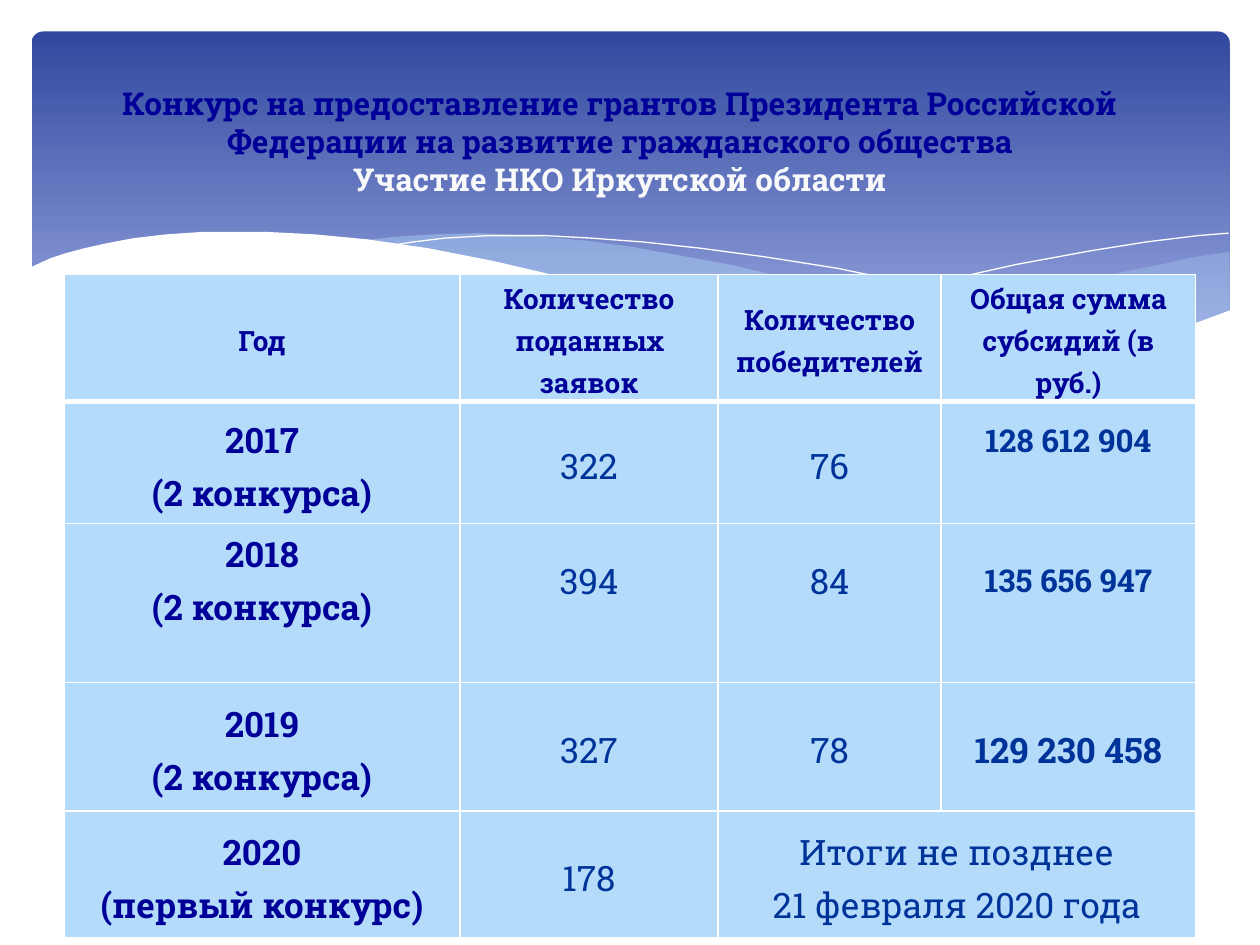
import pptx
import pptx.dml.color
import pptx.enum.shapes
import pptx.enum.text
import pptx.oxml
import pptx.oxml.ns
import pptx.util

FONT = "Roboto Slab"
NAVY, BLUE, SKY, WHITE = "000099", "003399", "B4DCFA", "FFFFFF"
CENTER = pptx.enum.text.PP_ALIGN.CENTER
MIDDLE = pptx.enum.text.MSO_ANCHOR.MIDDLE

deck = pptx.Presentation()
deck.slide_width = pptx.util.Inches(10)
deck.slide_height = pptx.util.Inches(7.5)
page = deck.slides.add_slide(deck.slide_layouts[6])
# The page is a grid of 1000 columns and 750 rows of square units.
unit = deck.slide_width // 1000


def color(value):
    return pptx.dml.color.RGBColor.from_string(value)


def add_curve(points, fill=None, alpha=100, line=None):
    """Draw grid points as a filled outline, or as an open hairline."""
    builder = page.shapes.build_freeform(*points[0], scale=unit)
    builder.add_line_segments(points[1:], close=fill is not None)
    curve = builder.convert_to_shape()
    curve.shadow.inherit = False
    if fill:
        curve.fill.solid()
        curve.fill.fore_color.rgb = color(fill)
        tint = curve.fill._xPr.find(".//" + pptx.oxml.ns.qn("a:srgbClr"))
        tint.append(pptx.oxml.parse_xml(
            f'<a:alpha {pptx.oxml.ns.nsdecls("a")} val="{alpha * 1000}"/>'))
    else:
        curve.fill.background()
    if line:
        curve.line.color.rgb = color(line)
        curve.line.width = pptx.util.Pt(0)
    else:
        curve.line.fill.background()


# Banner with waves
banner = page.shapes.add_shape(pptx.enum.shapes.MSO_SHAPE.ROUNDED_RECTANGLE,
                               25 * unit, 25 * unit, 951 * unit, 270 * unit)
banner.adjustments[0] = 0.034
banner.shadow.inherit = False
banner.line.fill.background()
banner.fill.gradient()
banner.fill.gradient_angle = 270
for stop, (place, shade) in zip(banner.fill.gradient_stops, [(0, "31489F"), (0.9, "95A4DE")]):
    stop.position = place
    stop.color.rgb = color(shade)

add_curve([(976, 200), (948, 204), (921, 210), (891, 216), (861, 223), (805, 237), (753, 248),
           (706, 257), (661, 265), (705, 271), (745, 275), (792, 277), (835, 277), (872, 274),
           (905, 269), (935, 262), (963, 252), (976, 247)], SKY, 29)
add_curve([(893, 273), (837, 265), (775, 254), (706, 240), (629, 222), (584, 211), (541, 203),
           (502, 196), (465, 191), (420, 187), (380, 185), (344, 186), (313, 188), (286, 191),
           (323, 196), (362, 203), (404, 211), (449, 222), (530, 240), (601, 255), (665, 266),
           (722, 274), (773, 277), (828, 278), (876, 275)], SKY, 40)
add_curve([(309, 195), (328, 192), (353, 189), (387, 187), (433, 187), (469, 189), (510, 192),
           (556, 197), (608, 204), (665, 213), (727, 226), (795, 241), (869, 261), (907, 272)],
          line=WHITE)
add_curve([(613, 257), (653, 246), (695, 235), (748, 223), (806, 210), (866, 199), (910, 192),
           (951, 187), (975, 185)], line=WHITE)
add_curve([(977, 246), (950, 256), (920, 265), (887, 271), (850, 275), (809, 277), (761, 275),
           (708, 270), (648, 262), (579, 250), (503, 233), (447, 220), (391, 207), (340, 197),
           (292, 190), (250, 186), (211, 184), (161, 184), (132, 186), (106, 189), (85, 193),
           (67, 197), (52, 201), (40, 205), (29, 210), (23, 213), (23, 329), (977, 329)], WHITE)

# Table of years: the sums differ in size, and some cells sit above the middle
columns = [314, 205, 177, 202]
rows = [100, 97, 126, 102, 101]
content = [
    ["Год", "Количество поданных заявок", "Количество победителей", "Общая сумма субсидий (в руб.)"],
    ["2017\n(2 конкурса)", "322", "76", "128 612 904"],
    ["2018\n(2 конкурса)", "394", "84", "135 656 947"],
    ["2019\n(2 конкурса)", "327", "78", "129 230 458"],
    ["2020\n(первый конкурс)", "178", "Итоги не позднее\v21 февраля 2020 года", ""],
]
sum_sizes = {1: 18, 2: 18}
raised = {(1, 3), (2, 0), (2, 1), (2, 2), (2, 3)}

table = page.shapes.add_table(len(rows), len(columns), 51 * unit, 218 * unit,
                              sum(columns) * unit, sum(rows) * unit).table
table.horz_banding = False
for column, width in zip(table.columns, columns):
    column.width = width * unit
for row, height in zip(table.rows, rows):
    row.height = height * unit
table.cell(4, 2).merge(table.cell(4, 3))

for r, texts in enumerate(content):
    for c, text in enumerate(texts):
        cell = table.cell(r, c)
        cell.fill.solid()
        cell.fill.fore_color.rgb = color(SKY)
        cell.vertical_anchor = MIDDLE
        cell.margin_left = cell.margin_right = 7 * unit
        cell.margin_top = 0
        cell.margin_bottom = 41 * unit if (r, c) in raised else 0
        widths = {"L": 1, "R": 1, "T": 3 if r == 1 else 1, "B": 3 if r == 0 else 1}
        for place, (side, width) in enumerate(widths.items()):
            cell._tc.get_or_add_tcPr().insert(place, pptx.oxml.parse_xml(
                f'<a:ln{side} {pptx.oxml.ns.nsdecls("a")} w="{pptx.util.Pt(width)}">'
                f'<a:solidFill><a:srgbClr val="{WHITE}"/></a:solidFill></a:ln{side}>'))
        if cell.is_spanned:
            continue
        cell.text_frame.text = text
        for para in cell.text_frame.paragraphs:
            para.alignment = CENTER
            para.line_spacing = 1.15
            para.font.name = FONT
            para.font.bold = r == 0 or c in (0, 3)
            para.font.color.rgb = color(NAVY if r == 0 or c == 0 else BLUE)
            size = 16 if r == 0 else sum_sizes.get(r, 20) if c == 3 else 20
            para.font.size = pptx.util.Pt(size)

# Title
title = page.shapes.add_textbox(59 * unit, 60 * unit, 866 * unit, 104 * unit)
title.text_frame.word_wrap = True
title.text_frame.vertical_anchor = MIDDLE
para = title.text_frame.paragraphs[0]
para.alignment = CENTER
para.font.name = FONT
para.font.size = pptx.util.Pt(18)
para.font.bold = True
span = para.add_run()
span.text = ("Конкурс на предоставление грантов Президента Российской Федерации "
             "на развитие гражданского общества")
span.font.color.rgb = color(NAVY)
para.add_line_break()
span = para.add_run()
span.text = "Участие НКО Иркутской области"
span.font.color.rgb = color("F7F9FB")

deck.save("out.pptx")
